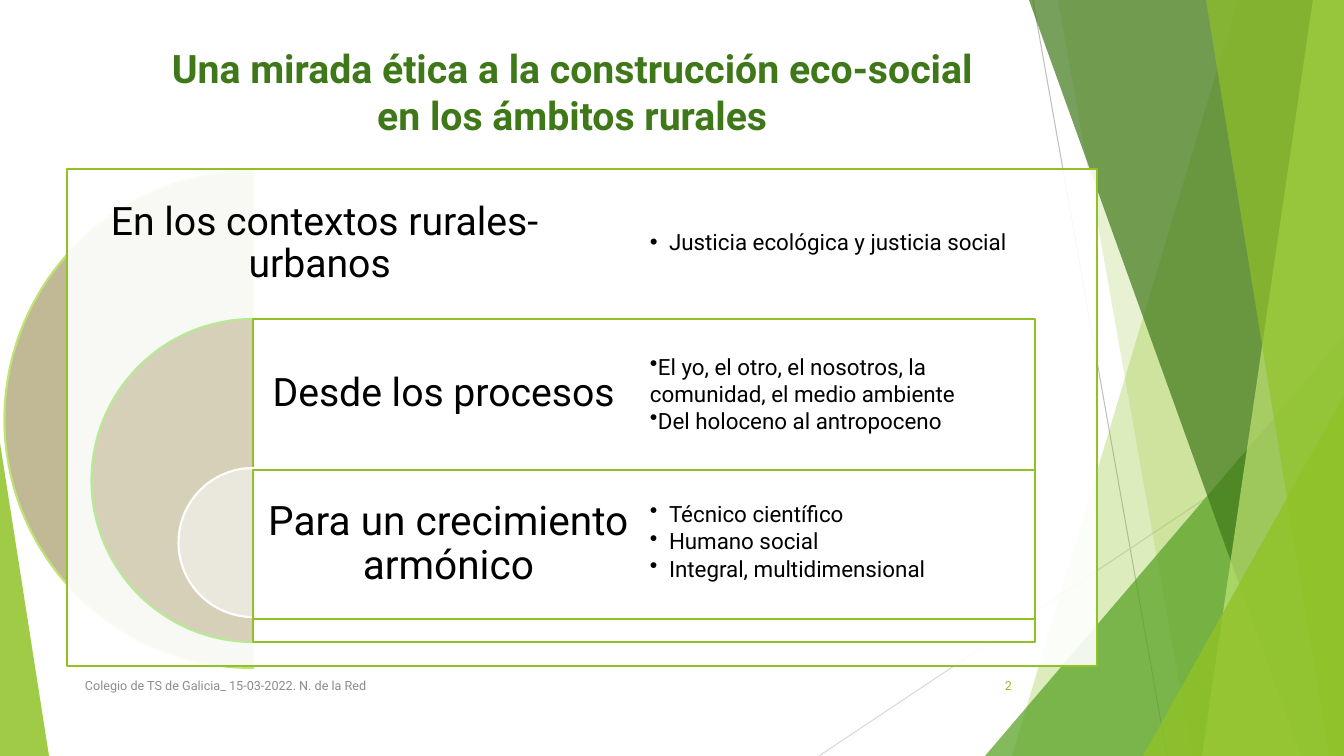
from lxml import etree
from pptx import Presentation, util as u
from pptx.dml.color import RGBColor
from pptx.enum import shapes, text
from pptx.oxml.ns import qn

BLACK, WHITE = RGBColor(0, 0, 0), RGBColor(255, 255, 255)
LIME = RGBColor(0x90, 0xC2, 0x26)
PALE = RGBColor(0xC0, 0xE4, 0x74)
GREEN = RGBColor(0x54, 0xA0, 0x21)
DARK = RGBColor(0x3F, 0x78, 0x19)
MINT = RGBColor(0xB7, 0xE9, 0x96)
TAN = RGBColor(0xC1, 0xB9, 0x95)
SAND = RGBColor(0xD6, 0xD0, 0xB8)
CREAM = RGBColor(0xEA, 0xE8, 0xDC)
GREY = RGBColor(0x8C, 0x8C, 0x8C)
SILVER = RGBColor(0xBF, 0xBF, 0xBF)
MIST = RGBColor(0xD9, 0xD9, 0xD9)

# Content
TITLE = "Una mirada ética a la construcción eco-social \ven los ámbitos rurales "
FOOT = "Colegio de TS de Galicia_ 15-03-2022. N. de la Red"
# heading, size, pie top, diameter, pie fill, pie line, panel left, top, width
LEVELS = [
    ("En los contextos rurales-urbanos ", 28, 171, 497, TAN, PALE, 67, 169, 1030),
    ("Desde los procesos ", 28, 319, 323, SAND, MINT, 253, 319, 782),
    ("Para un crecimiento armónico", 29, 468, 149, CREAM, WHITE, 253, 470, 782),
]
# items, hanging indent, line spacing, space after
LISTS = [
    (["Justicia ecológica y justicia social"], 19, 0.9, 2.4),
    (["El yo, el otro, el nosotros, la comunidad, el medio ambiente",
      "Del holoceno al antropoceno"], 0, 1.0, 0),
    (["Técnico científico", "Humano social", "Integral, multidimensional"],
     19, 0.9, 2.4),
]
MID, ROW, LIST_X, LIST_W = 253, 149, 643, 391

# Backdrop: straight lines, then facets as corner points or (box, apex)
RAYS = [(1033, 0, 1167, 756, SILVER), (1344, 406, 819, 756, MIST)]
FACETS = [
    ([(1238, 0), (1344, 0), (1344, 756), (1012, 756)], LIME, 30),
    ([(1058, 0), (1344, 0), (1344, 756), (1192, 756)], LIME, 20),
    ((985, 336, 359, 420, 1), GREEN, 72),
    ([(1029, 0), (1344, 0), (1344, 756), (1301, 756)], DARK, 70),
    ([(1313, 0), (1344, 0), (1344, 756), (1202, 756)], PALE, 70),
    ([(1206, 0), (1344, 0), (1344, 756), (1329, 756)], LIME, 65),
    ((1143, 396, 201, 360, 1), LIME, 80),
    ((0, 443, 49, 313, 0), LIME, 85),
]


def px(n):
    return u.Emu(round(n * 914400 / 100.8))


def paint(shape, fill, alpha=100, line=None):
    shape.shadow.inherit = False
    shape.fill.solid()
    shape.fill.fore_color.rgb = fill
    if alpha < 100:
        color = shape.element.spPr.find(qn("a:solidFill"))[0]
        etree.SubElement(color, qn("a:alpha"), val=str(alpha * 1000))
    if line is None:
        shape.line.fill.background()
    else:
        shape.line.color.rgb = line
        shape.line.width = u.Pt(1.5)


def add(kind, x, y, w, h):
    return slide.shapes.add_shape(kind, px(x), px(y), px(w), px(h))


def add_box(x, y, w, h):
    return slide.shapes.add_textbox(px(x), px(y), px(w), px(h))


def place(shape, x, y, w, h):
    shape.left, shape.top, shape.width, shape.height = map(px, (x, y, w, h))


def write(box, lines, size, color=BLACK, bold=False, align=text.PP_ALIGN.LEFT,
          anchor=text.MSO_ANCHOR.MIDDLE, inset=None, gap=1.0, after=0, hang=None):
    frame = box.text_frame
    frame.word_wrap = True
    frame.auto_size = text.MSO_AUTO_SIZE.NONE
    frame.vertical_anchor = anchor
    if inset is not None:
        frame.margin_left = frame.margin_right = px(inset)
        frame.margin_top = frame.margin_bottom = px(inset)
    frame.text = "\n".join(lines)
    for par in frame.paragraphs:
        par.alignment, par.line_spacing = align, gap
        par.space_before, par.space_after = u.Pt(0), u.Pt(after)
        for run in par.runs:
            font = run.font
            font.name, font.size, font.bold = "Roboto", u.Pt(size), bold
            font.color.rgb = color
        if hang is not None:
            props = par._p.get_or_add_pPr()
            props.set("marL", str(px(hang)))
            props.set("indent", str(-px(hang)))
            etree.SubElement(props, qn("a:buChar"), char="•")


deck = Presentation()
deck.slide_width, deck.slide_height = px(1344), px(756)
slide = deck.slides.add_slide(deck.slide_layouts[1])
title, body = slide.placeholders

# Backdrop
for x1, y1, x2, y2, color in RAYS:
    ray = slide.shapes.add_connector(
        shapes.MSO_CONNECTOR.STRAIGHT, px(x1), px(y1), px(x2), px(y2))
    ray.line.color.rgb = color
    ray.line.width = u.Pt(0.75)
    etree.SubElement(ray.element.spPr, qn("a:effectLst"))
for form, color, alpha in FACETS:
    if isinstance(form, list):
        pts = [(px(x), px(y)) for x, y in form]
        pen = slide.shapes.build_freeform(*pts[0])
        pen.add_line_segments(pts[1:], close=True)
        facet = pen.convert_to_shape()
    else:
        facet = add(shapes.MSO_SHAPE.ISOSCELES_TRIANGLE, *form[:4])
        facet.adjustments[0] = form[4]
    paint(facet, color, alpha)

# Title, footer and page number
place(title, 67, 39, 1020, 146)
write(title, [TITLE], 28, DARK, bold=True, align=text.PP_ALIGN.CENTER,
      anchor=text.MSO_ANCHOR.TOP)
write(add_box(75, 666, 695, 40), [FOOT], 9, GREY)
write(add_box(947, 666, 75, 40), ["2"], 9, LIME, align=text.PP_ALIGN.RIGHT)

# Nested half circles, panels and headings
for head, size, top, wide, fill, line, x, y, w in LEVELS:
    pie = add(shapes.MSO_SHAPE.PIE, MID - wide / 2, top, wide, wide)
    pie.adjustments[0], pie.adjustments[1] = 54, 162
    paint(pie, fill, line=line)
    paint(add(shapes.MSO_SHAPE.RECTANGLE, x, y, w, wide), WHITE, 90, LIME)
    write(add_box(x, y, w / 2, ROW), [head], size,
          align=text.PP_ALIGN.CENTER, inset=12, gap=0.9)

# Lists beside the headings; the body holds the first, brought to the front
body.element.getparent().append(body.element)
for i, (items, hang, gap, after) in enumerate(LISTS):
    spot = LIST_X, min(LEVELS[i][2], LEVELS[i][7]), LIST_W, ROW
    if i == 0:
        box = body
        place(box, *spot)
    else:
        box = add_box(*spot)
    write(box, items, 16, inset=7, gap=gap, after=after, hang=hang)

deck.save("out.pptx")
